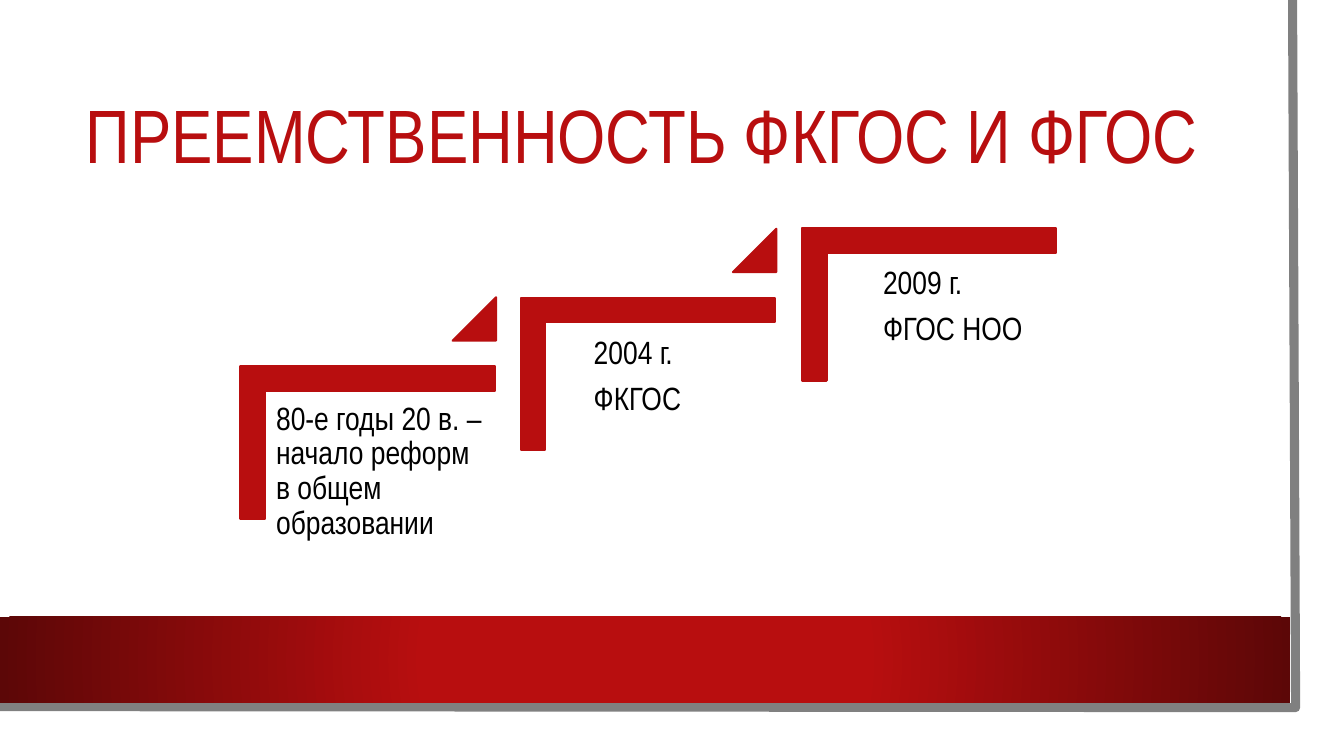
from lxml import etree
from pptx import Presentation
from pptx.dml.color import RGBColor
from pptx.enum.shapes import MSO_SHAPE
from pptx.enum.text import MSO_ANCHOR, PP_ALIGN
from pptx.oxml import parse_xml
from pptx.util import Pt

PX = 9144  # EMU per px, 100 px to the inch
COLORS = {"paper": "FFFFFF", "edge": "808080", "red": "B80E0F",
          "dark": "5C0707", "text": "000000"}
DRAWING = "http://schemas.openxmlformats.org/drawingml/2006/main"

deck = Presentation()
deck.slide_width, deck.slide_height = 1333 * PX, 750 * PX
page = deck.slides.add_slide(deck.slide_layouts[6])


def add_figure(preset, left, top, width, height, color, line=None):
    figure = page.shapes.add_shape(
        preset, left * PX, top * PX, width * PX, height * PX)
    figure.shadow.inherit = False
    figure.fill.solid()
    figure.fill.fore_color.rgb = RGBColor.from_string(COLORS[color])
    if line:
        figure.line.color.rgb = RGBColor.from_string(COLORS[color])
        figure.line.width = Pt(line)
    else:
        figure.line.fill.background()
    return figure


def add_text(text, left, top, width, height, size, color="text",
             inset=10, anchor=MSO_ANCHOR.TOP, after=0):
    box = page.shapes.add_textbox(
        left * PX, top * PX, width * PX, height * PX)
    frame = box.text_frame
    frame.word_wrap = True
    frame.vertical_anchor = anchor
    frame.margin_left = frame.margin_right = inset * PX
    frame.margin_top = frame.margin_bottom = inset * PX
    for index, line in enumerate(text.split("\n")):
        para = frame.add_paragraph() if index else frame.paragraphs[0]
        para.alignment = PP_ALIGN.LEFT
        para.line_spacing = 0.9
        para.space_after = Pt(after)
        span = para.add_run()
        span.text = line
        span.font.name = "Arial Narrow"
        span.font.size = Pt(size)
        span.font.color.rgb = RGBColor.from_string(COLORS[color])


# Sheet of paper with its grey right and bottom edge
add_figure(MSO_SHAPE.RECTANGLE, 0, 0, 1310, 727, "paper")
builder = page.shapes.build_freeform(1282, 0, scale=PX)
builder.add_line_segments([(1285, 702), (-3, 701)], close=False)
edge = builder.convert_to_shape()
edge.shadow.inherit = False
edge.fill.background()
edge.line.color.rgb = RGBColor.from_string(COLORS["edge"])
edge.line.width = Pt(6.5)

# Red band, darkening from the centre outwards
band = add_figure(MSO_SHAPE.RECTANGLE, 0, 612, 1280, 85, "red")
solid = band.element.spPr.find(f"{{{DRAWING}}}solidFill")
gradient = parse_xml(f'<a:gradFill xmlns:a="{DRAWING}" rotWithShape="1"/>')
stops = etree.SubElement(gradient, f"{{{DRAWING}}}gsLst")
for position, color in ((34, "red"), (100, "dark")):
    stop = etree.SubElement(stops, f"{{{DRAWING}}}gs", pos=str(position * 1000))
    etree.SubElement(stop, f"{{{DRAWING}}}srgbClr", val=COLORS[color])
circle = etree.SubElement(gradient, f"{{{DRAWING}}}path", path="circle")
etree.SubElement(circle, f"{{{DRAWING}}}fillToRect",
                 l="50000", t="50000", r="50000", b="50000")
band.element.spPr.replace(solid, gradient)

# Title
add_text("ПРЕЕМСТВЕННОСТЬ ФКГОС И ФГОС", 75, 75, 1137, 126, size=54,
         color="red", anchor=MSO_ANCHOR.MIDDLE)

# Staircase: text, then left, top and width of its box
steps = [
    ("80-е годы 20 в. – начало реформ в общем образовании", 264, 389, 227),
    ("2004 г.\nФКГОС", 579, 324, 259),
    ("2009 г.\nФГОС НОО", 866, 255, 227),
]
for index, (text, text_left, text_top, text_width) in enumerate(steps):
    left, top = 289 + 557 * index // 2, 313 - 137 * index // 2
    corner = add_figure(MSO_SHAPE.CORNER, left, top, 151, 252, "red", line=1.5)
    corner.rotation = 90
    corner.adjustments[0] = corner.adjustments[1] = 0.16
    add_text(text, text_left, text_top, text_width, 199, size=23, after=8)
    if index < len(steps) - 1:
        arrow = add_figure(MSO_SHAPE.ISOSCELES_TRIANGLE, left + 160, top - 18,
                           43, 43, "red", line=1.5)
        arrow.adjustments[0] = 1

deck.save("out.pptx")
